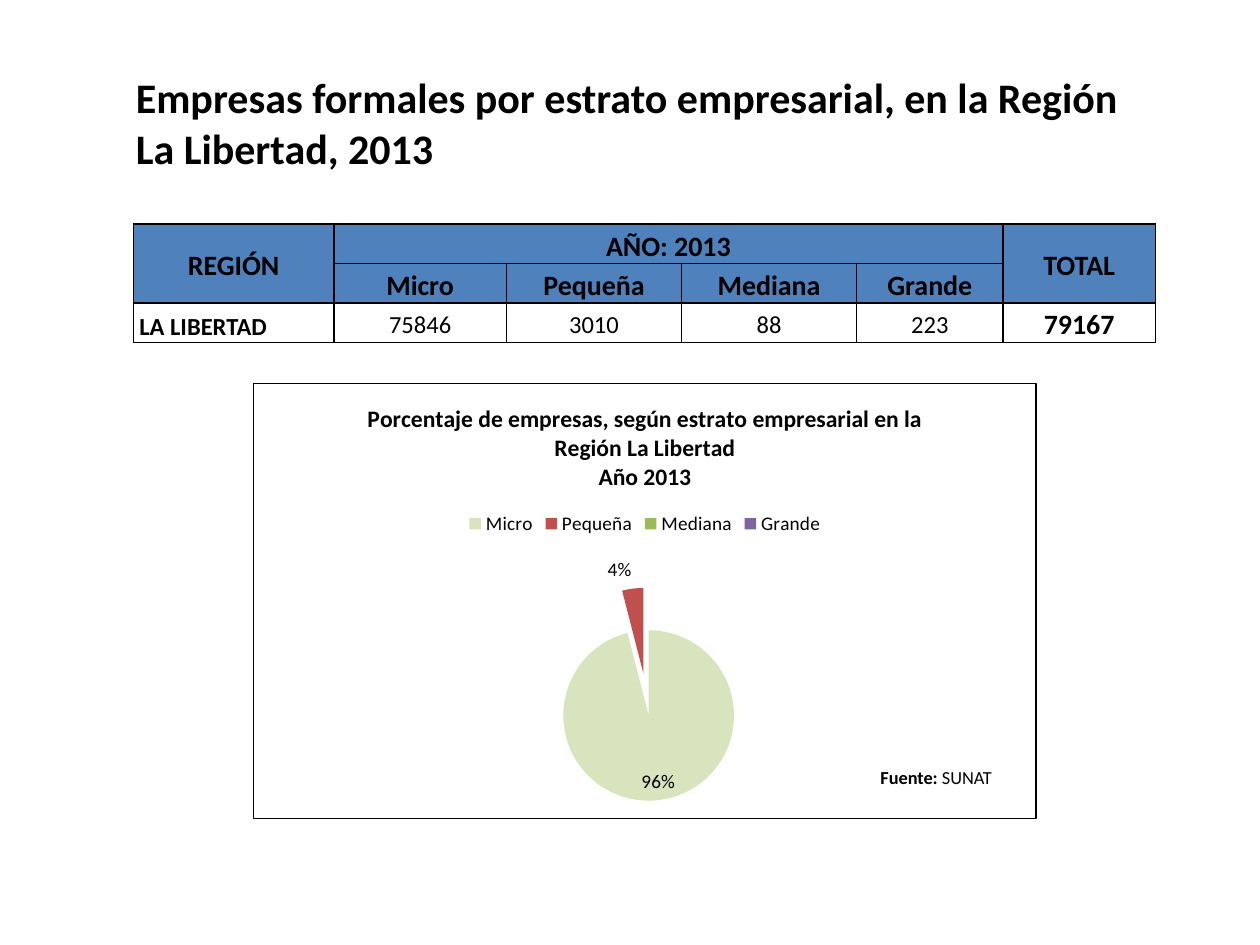
import pptx
import pptx.chart.data
import pptx.dml.color
import pptx.enum.chart
import pptx.enum.shapes
import pptx.enum.text
import pptx.oxml
import pptx.oxml.ns
import pptx.util

Cm, Pt = pptx.util.Cm, pptx.util.Pt
RGB = pptx.dml.color.RGBColor
ALIGN = pptx.enum.text.PP_ALIGN
ANCHOR = pptx.enum.text.MSO_ANCHOR
qn = pptx.oxml.ns.qn

# Content
FONT = "Calibri"
BLACK, WHITE = RGB(0, 0, 0), RGB(255, 255, 255)
BLUE = RGB(0x4F, 0x81, 0xBD)
TITLE = "Empresas formales por estrato empresarial, en la Región La Libertad, 2013"
HEADING = ["Porcentaje de empresas, según estrato empresarial en la Región La Libertad",
           "Año 2013"]
SOURCE = [("Fuente:", True), (" SUNAT", False)]
SLICES = [("Micro", 96, RGB(0xD7, 0xE4, 0xBD)),
          ("Pequeña", 4, RGB(0xC0, 0x50, 0x4D)),
          ("Mediana", 0, RGB(0x9B, 0xBB, 0x59)),
          ("Grande", 0, RGB(0x80, 0x64, 0xA2))]
NAMES = [name for name, _, _ in SLICES]
ROWS = [["REGIÓN", "AÑO: 2013", "", "", "", "TOTAL"],
        ["", *NAMES, ""],
        ["LA LIBERTAD", "75846", "3010", "88", "223", "79167"]]
WIDTHS = [4.04, 3.48, 3.53, 3.53, 2.95, 3.07]
HEIGHT = 0.79
MERGES = [((0, 0), (1, 0)), ((0, 1), (0, 4)), ((0, 5), (1, 5))]
# Plot area and moved labels, as fractions of the chart
PLOT = {"x": 0.365, "y": 0.47, "w": 0.273, "h": 0.49}
MOVES = {2: {"x": 0.03, "y": -0.06}, 3: {"x": 0.1, "y": -0.02}}


def style(font, size, bold=False):
    font.name, font.size, font.bold = FONT, Pt(size), bold
    font.color.rgb = BLACK


def parse(tag, body):
    """Make a chart or drawing element from its tag and inner XML."""
    spaces = pptx.oxml.ns.nsdecls("a", "c")
    return pptx.oxml.parse_xml(f"<{tag} {spaces}>{body}</{tag}>")


def line(tag, points):
    """Make a solid black line element."""
    item = parse(tag, '<a:solidFill><a:srgbClr val="000000"/></a:solidFill>')
    item.set("w", str(Pt(points)))
    return item


def layout(marks, inner=False):
    """Make a manual chart layout."""
    body = '<c:layoutTarget val="inner"/>' if inner else ""
    if inner:
        body += '<c:xMode val="edge"/><c:yMode val="edge"/>'
    body += "".join(f'<c:{key} val="{val}"/>' for key, val in marks.items())
    return parse("c:layout", f"<c:manualLayout>{body}</c:manualLayout>")


def add_table(slide):
    rows, cols = len(ROWS), len(WIDTHS)
    table = slide.shapes.add_table(rows, cols, Cm(2.69), Cm(4.52),
                                   Cm(sum(WIDTHS)), Cm(HEIGHT * rows)).table
    for col, width in zip(table.columns, WIDTHS):
        col.width = Cm(width)
    for r, row in enumerate(ROWS):
        table.rows[r].height = Cm(HEIGHT)
        for c, text in enumerate(row):
            cell = table.cell(r, c)
            head, first = r < 2, c == 0
            low = first and not head
            cell.margin_left = cell.margin_right = Cm(0.12)
            cell.margin_top = cell.margin_bottom = 0
            cell.vertical_anchor = ANCHOR.BOTTOM if low else ANCHOR.MIDDLE
            para = cell.text_frame.paragraphs[0]
            para.text = text
            para.alignment = ALIGN.LEFT if low else ALIGN.CENTER
            para.line_spacing = 1.15
            edge = first or c == cols - 1
            style(para.font, 16 if head or c == cols - 1 else 14, head or edge)
            props = cell._tc.get_or_add_tcPr()
            for side in ("L", "R", "T", "B"):
                props.append(line(f"a:ln{side}", 1))
            if head:
                cell.fill.solid()
                cell.fill.fore_color.rgb = BLUE
            else:
                cell.fill.background()
    for start, end in MERGES:
        table.cell(*start).merge(table.cell(*end))


def add_chart(slide):
    data = pptx.chart.data.CategoryChartData()
    data.categories = NAMES
    data.add_series("Series 1", [val for _, val, _ in SLICES])
    chart = slide.shapes.add_chart(pptx.enum.chart.XL_CHART_TYPE.PIE, Cm(5.1),
                                   Cm(7.72), Cm(15.8), Cm(8.79), data).chart
    style(chart.font, 11)

    # Heading and legend
    frame = chart.chart_title.text_frame
    for i, text in enumerate(HEADING):
        para = frame.add_paragraph() if i else frame.paragraphs[0]
        para.text = text
        style(para.font, 13.5, True)
    chart.has_legend = True
    chart.legend.position = pptx.enum.chart.XL_LEGEND_POSITION.TOP
    chart.legend.include_in_layout = False

    # Slices
    plot = chart.plots[0]
    plot.vary_by_categories = True
    series = plot.series[0]
    for i, (_, _, color) in enumerate(SLICES):
        fill = series.points[i].format.fill
        fill.solid()
        fill.fore_color.rgb = color
    burst = parse("c:explosion", "")
    burst.set("val", "25")
    series._element.find(qn("c:dPt")).addprevious(burst)
    for point in series._element.findall(qn("c:dPt")):
        part = parse("c:explosion", "")
        part.set("val", "25")
        point.find(qn("c:spPr")).addprevious(part)

    # Percent labels
    spot = pptx.enum.chart.XL_LABEL_POSITION
    labels = series.data_labels
    labels.show_percentage, labels.show_value = True, False
    labels.number_format, labels.number_format_is_linked = "0%", False
    labels.position = spot.BEST_FIT
    for i in MOVES:
        series.points[i].data_label.position = spot.OUTSIDE_END
    for label in labels._element.findall(qn("c:dLbl")):
        index = label.find(qn("c:idx"))
        index.addnext(layout(MOVES[int(index.get("val"))]))
        label.find(qn("c:showVal")).set("val", "0")
        label.find(qn("c:showPercent")).set("val", "1")

    # Plot place and frame
    root = chart._chartSpace.find(qn("c:chart"))
    area = root.find(qn("c:plotArea"))
    old = area.find(qn("c:layout"))
    if old is not None:
        area.remove(old)
    area.insert(0, layout(PLOT, True))
    border = parse("c:spPr", "<a:noFill/>")
    border.append(line("a:ln", 0.75))
    root.addnext(border)


def add_title(slide):
    frame = slide.shapes.add_textbox(Cm(2.49), Cm(1.32), Cm(20.6),
                                     Cm(2.31)).text_frame
    frame.word_wrap = True
    frame.auto_size = pptx.enum.text.MSO_AUTO_SIZE.SHAPE_TO_FIT_TEXT
    frame.text = TITLE
    style(frame.paragraphs[0].font, 24, True)


def add_source(slide):
    box = slide.shapes.add_shape(pptx.enum.shapes.MSO_SHAPE.RECTANGLE,
                                 Cm(17.5), Cm(15.32), Cm(2.92), Cm(0.99))
    box.shadow.inherit = False
    box.fill.solid()
    box.fill.fore_color.rgb = WHITE
    box.line.fill.background()
    frame = box.text_frame
    frame.word_wrap = True
    frame.vertical_anchor = ANCHOR.TOP
    para = frame.paragraphs[0]
    para.alignment = ALIGN.LEFT
    para.space_after = Pt(10)
    for text, bold in SOURCE:
        run = para.add_run()
        run.text = text
        style(run.font, 10.5, bold)


def main():
    deck = pptx.Presentation()
    deck.slide_width, deck.slide_height = Cm(25.4), Cm(19.05)
    slide = deck.slides.add_slide(deck.slide_layouts[6])
    for add in (add_table, add_chart, add_title, add_source):
        add(slide)
    deck.save("out.pptx")


if __name__ == "__main__":
    main()
